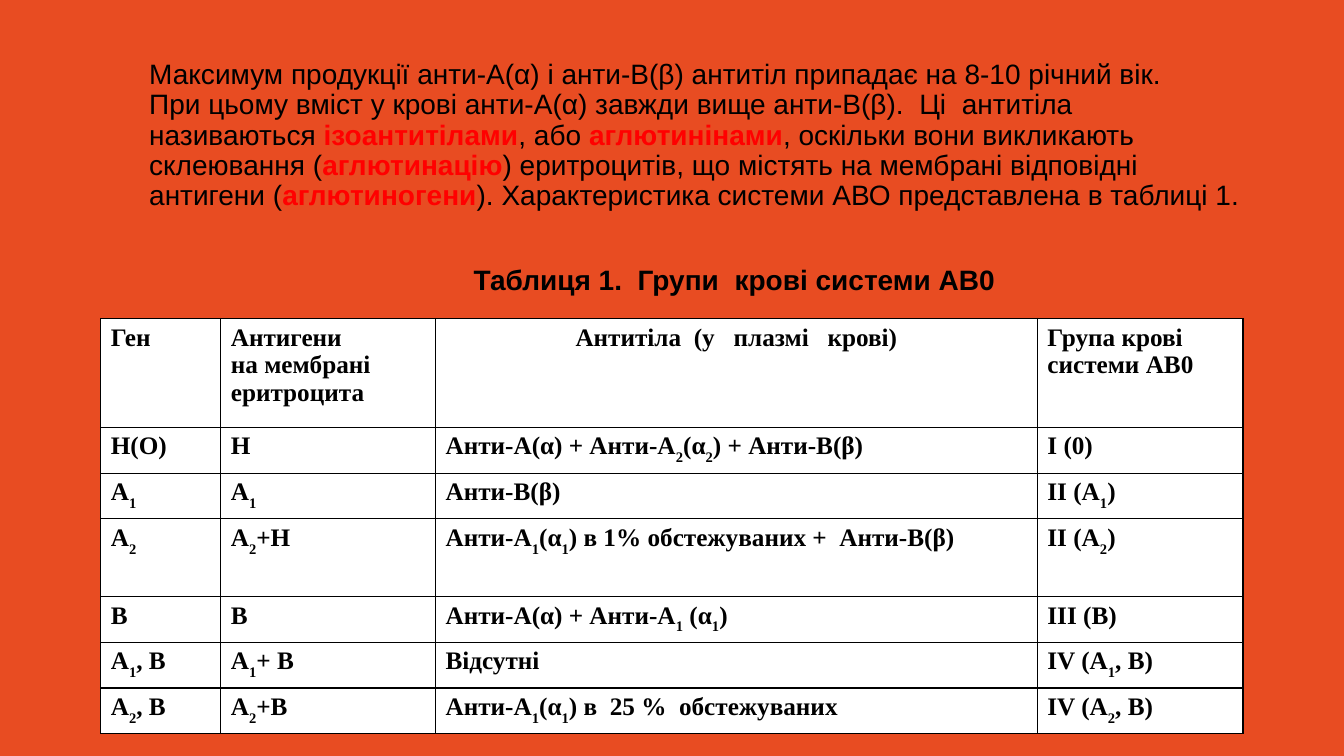
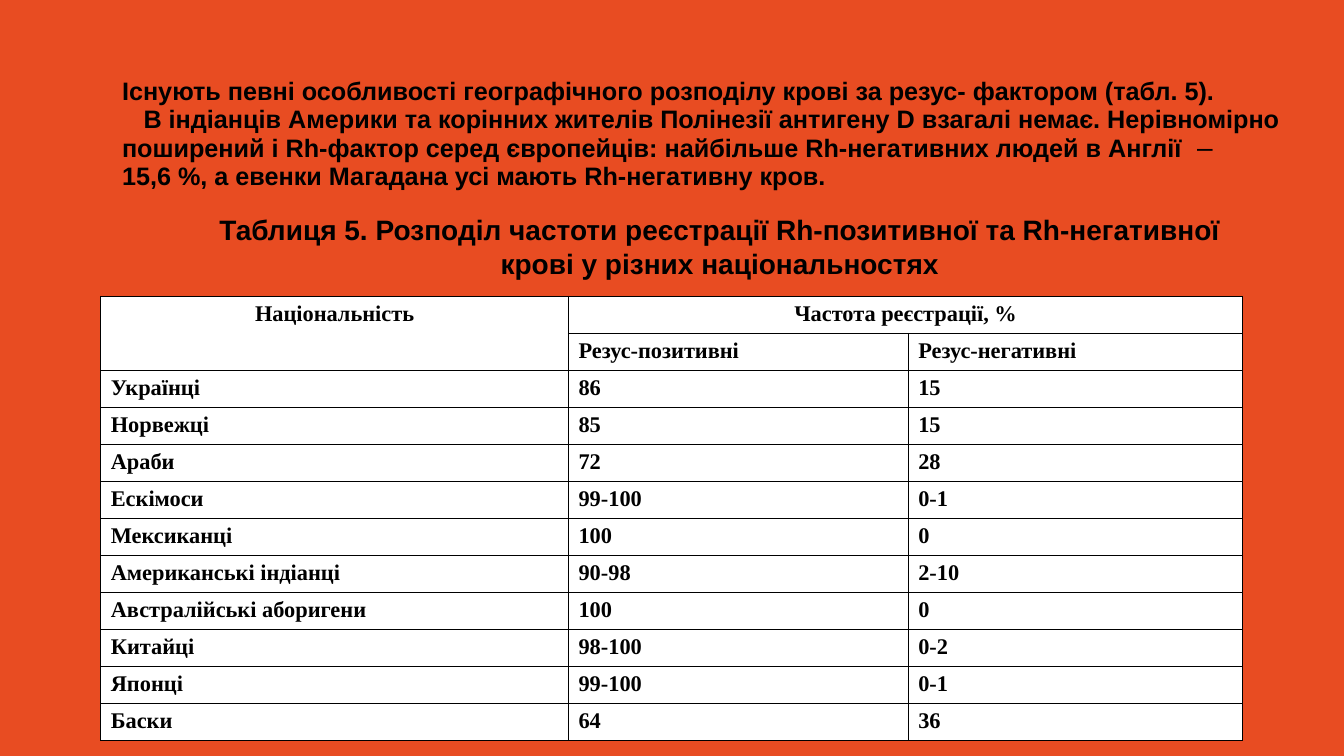
import lxml.etree
import pptx
import pptx.dml.color
import pptx.enum.text
import pptx.oxml.ns
import pptx.util

COLORS = {"background": "E84C22", "cell": "FFFFFF", "text": "000000", "term": "FF0000"}
LEFT = pptx.enum.text.PP_ALIGN.LEFT
CENTER = pptx.enum.text.PP_ALIGN.CENTER

presentation = pptx.Presentation()
presentation.slide_width = pptx.util.Inches(13.33)
presentation.slide_height = pptx.util.Inches(7.5)
# The grid has 100 columns and 100 rows.
COLUMN = presentation.slide_width / 100
ROW = presentation.slide_height / 100
TABLE_LEFT = 7.5

PLAIN = {"font": "Arial", "size": 20, "bold": False, "color": COLORS["text"], "baseline": 0}
BOLD = {**PLAIN, "bold": True}
TERM = {"bold": True, "color": COLORS["term"]}
DASH = {"bold": False, "size": 20}
SUBSCRIPT = {"baseline": -30}


def write_text(text_frame, text, style, marked, alignment):
    """Fill a frame: newline parts paragraphs, \\v breaks a line, |...| takes the marked style."""
    for number, content in enumerate(text.split("\n")):
        paragraph = text_frame.add_paragraph() if number else text_frame.paragraphs[0]
        paragraph.alignment = alignment
        for index, part in enumerate(content.split("|")):
            look = {**style, **marked} if index % 2 else style
            for line_number, line in enumerate(part.split("\v")):
                if line_number:
                    paragraph.add_line_break()
                if not line:
                    continue
                run = paragraph.add_run()
                run.text = line
                run.font.name = look["font"]
                run.font.size = pptx.util.Pt(look["size"])
                run.font.bold = look["bold"]
                run.font.color.rgb = pptx.dml.color.RGBColor.from_string(look["color"])
                if look["baseline"]:
                    run._r.get_or_add_rPr().set("baseline", str(look["baseline"] * 1000))


def add_borders(cell):
    properties = cell._tc.get_or_add_tcPr()
    for position, side in enumerate(("lnL", "lnR", "lnT", "lnB")):
        line = lxml.etree.Element(pptx.oxml.ns.qn(f"a:{side}"), w=str(pptx.util.Pt(1)))
        fill = lxml.etree.SubElement(line, pptx.oxml.ns.qn("a:solidFill"))
        lxml.etree.SubElement(fill, pptx.oxml.ns.qn("a:srgbClr"), val=COLORS["text"])
        properties.insert(position, line)


blood_groups = {
    "title": "Максимум продукції анти-А(α) і анти-В(β) антитіл припадає на 8-10 річний вік.\v"
             "При цьому вміст у крові анти-А(α) завжди вище анти-В(β).  Ці  антитіла\v"
             "називаються |ізоантитілами|, або |аглютинінами|, оскільки вони викликають\v"
             "склеювання (|аглютинацію|) еритроцитів, що містять на мембрані відповідні\v"
             "антигени (|аглютиногени|). Характеристика системи АВО представлена в таблиці 1.",
    "title_box": (10.35, 8.8, 84.45, 26.4),
    "title_style": PLAIN,
    "title_marked": TERM,
    "title_bottom": 8.67,
    "caption": "Таблиця 1.  Групи  крові системи АВ0",
    "caption_box": (30.08, 34.13, 49.13, 5.73),
    "table_top": 42.13,
    "columns": (8.93, 15.98, 44.78, 15.3),
    "rows": (14.4, 6, 6, 10.27, 6, 6, 6),
    "cell_size": 18,
    "centered": [(0, 2)],
    "merges": [],
    "cells": [
        ("Ген", "Антигени\nна мембрані еритроцита", "Антитіла  (у   плазмі   крові)",
         "Група крові системи АВ0"),
        ("Н(О)", "Н", "Анти-А(α) + Анти-А|2|(α|2|) + Анти-В(β)", "І (0)"),
        ("А|1|", "А|1|", "Анти-В(β)", "II (А|1|)"),
        ("А|2|", "А|2|+Н", "Анти-А|1|(α|1|) в 1% обстежуваних +  Анти-В(β)", "II (А|2|)"),
        ("В", "В", "Анти-А(α) + Анти-А|1| (α|1|)", "III (В)"),
        ("А|1|, В", "А|1|+ В", "Відсутні", "IV (А|1|, B)"),
        ("А|2|, В", "А|2|+В", "Анти-А|1|(α|1|) в  25 %  обстежуваних", "IV (А|2|, В)"),
    ],
}

rhesus_frequency = {
    "title": "Існують певні особливості географічного розподілу крові за резус- фактором (табл. 5).\n"
             "В індіанців Америки та корінних жителів Полінезії антигену D взагалі немає. "
             "Нерівномірно поширений і Rh-фактор серед європейців: найбільше Rh-негативних "
             "людей в Англії | –|\v15,6 %, а евенки Магадана усі мають Rh-негативну кров.",
    "title_box": (8.33, 9.87, 89.63, 16),
    "title_style": {**BOLD, "size": 18},
    "title_marked": DASH,
    "title_bottom": 0.67,
    "caption": "Таблиця 5. Розподіл частоти реєстрації Rh-позитивної та Rh-негативної "
               "крові у різних національностях",
    "caption_box": (12.68, 27.47, 81.75, 10.27),
    "table_top": 39.2,
    "columns": (34.8, 25.28, 24.9),
    "rows": (4.9,) * 12,
    "cell_size": 16,
    "centered": [(0, 0), (0, 1)],
    "merges": [((0, 0), (1, 0)), ((0, 1), (0, 2))],
    "cells": [
        ("Національність", "Частота реєстрації, %", ""),
        ("", "Резус-позитивні", "Резус-негативні"),
        ("Українці", "86", "15"),
        ("Норвежці", "85", "15"),
        ("Араби", "72", "28"),
        ("Ескімоси", "99-100", "0-1"),
        ("Мексиканці", "100", "0"),
        ("Американські індіанці", "90-98", "2-10"),
        ("Австралійські аборигени", "100", "0"),
        ("Китайці", "98-100", "0-2"),
        ("Японці", "99-100", "0-1"),
        ("Баски", "64", "36"),
    ],
}

background = presentation.slide_master.background.fill
background.solid()
background.fore_color.rgb = pptx.dml.color.RGBColor.from_string(COLORS["background"])
title_only = presentation.slide_layouts.get_by_name("Title Only")

for content in (blood_groups, rhesus_frequency):
    slide = presentation.slides.add_slide(title_only)

    title = slide.shapes.title
    caption = slide.shapes.add_textbox(0, 0, 0, 0)
    for shape, box in ((title, content["title_box"]), (caption, content["caption_box"])):
        left, top, width, height = box
        shape.left, shape.width = int(left * COLUMN), int(width * COLUMN)
        shape.top, shape.height = int(top * ROW), int(height * ROW)
        shape.text_frame.word_wrap = True

    title.text_frame.auto_size = pptx.enum.text.MSO_AUTO_SIZE.NONE
    title.text_frame.vertical_anchor = pptx.enum.text.MSO_ANCHOR.MIDDLE
    title.text_frame.margin_bottom = int(content["title_bottom"] * ROW)
    write_text(title.text_frame, content["title"], content["title_style"],
               content["title_marked"], LEFT)
    for number, paragraph in enumerate(title.text_frame.paragraphs):
        paragraph.line_spacing = 0.9
        paragraph.space_before = pptx.util.Pt(0)
        if number:
            paragraph._p.get_or_add_pPr().set("indent", str(int(1.6 * COLUMN)))

    write_text(caption.text_frame, content["caption"], BOLD, {}, CENTER)

    columns, rows = content["columns"], content["rows"]
    table = slide.shapes.add_table(
        len(rows), len(columns), int(TABLE_LEFT * COLUMN), int(content["table_top"] * ROW),
        int(sum(columns) * COLUMN), int(sum(rows) * ROW)).table
    table.first_row = table.horz_banding = False
    for table_column, width in zip(table.columns, columns):
        table_column.width = int(width * COLUMN)
    for table_row, height in zip(table.rows, rows):
        table_row.height = int(height * ROW)
    for first, last in content["merges"]:
        table.cell(*first).merge(table.cell(*last))

    cell_style = {**BOLD, "font": "Times New Roman", "size": content["cell_size"]}
    for row_number, texts in enumerate(content["cells"]):
        for column_number, text in enumerate(texts):
            cell = table.cell(row_number, column_number)
            cell.fill.solid()
            cell.fill.fore_color.rgb = pptx.dml.color.RGBColor.from_string(COLORS["cell"])
            add_borders(cell)
            centered = (row_number, column_number) in content["centered"]
            write_text(cell.text_frame, text, cell_style, SUBSCRIPT, CENTER if centered else LEFT)

presentation.save("out.pptx")
